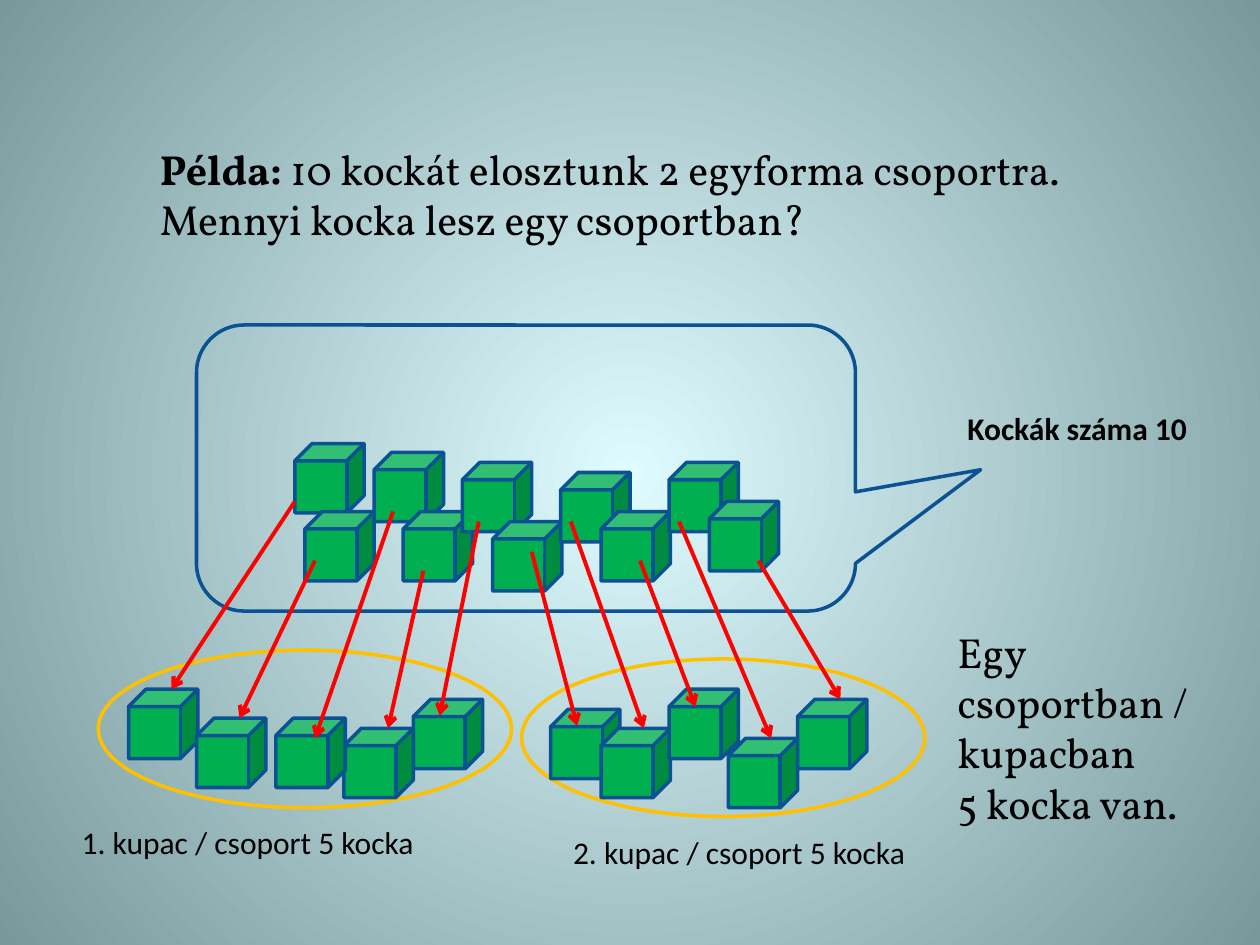
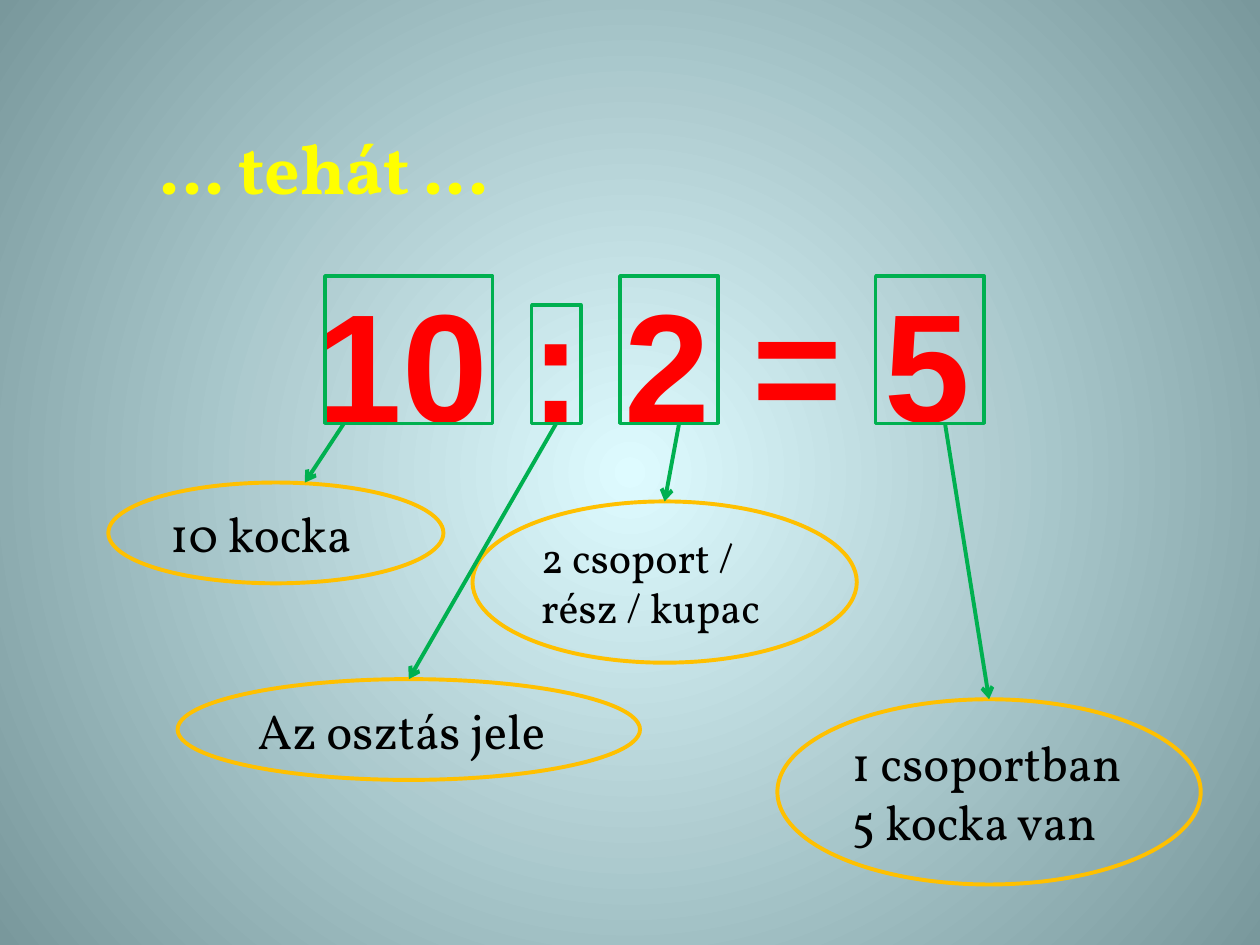
from collections import namedtuple
from dataclasses import dataclass

from lxml.etree import SubElement
from pptx import Presentation
from pptx.dml.color import RGBColor
from pptx.enum.shapes import MSO_CONNECTOR as Connector, MSO_SHAPE as Shape
from pptx.enum.text import MSO_ANCHOR as Anchor, PP_ALIGN as Align
from pptx.oxml.ns import qn
from pptx.util import Inches, Pt

Style = namedtuple("Style", "font size colour bold")


@dataclass(frozen=True)
class Theme:
    glow: str = "DEFBFF"
    edge: str = "79989C"
    green: str = "00B050"
    blue: str = "0B5292"
    gold: str = "FFC000"
    red: str = "FF0000"
    thin: float = 2
    thick: float = 2.25
    body: Style = Style("Vollkorn", 24, "000000", False)
    lead: Style = Style("Vollkorn", 24, "000000", True)
    note: Style = Style("Vollkorn", 28, "000000", False)
    label: Style = Style("Calibri", 18, "000000", False)
    count: Style = Style("Calibri", 18, "000000", True)
    heading: Style = Style("Vollkorn", 40, "FFFF00", True)
    equation: Style = Style("Arial", 88, "FF0000", True)


theme = Theme()


def write(frame, paragraphs, align=Align.LEFT):
    frame.word_wrap = True
    frame.vertical_anchor = Anchor.TOP
    for index, spans in enumerate(paragraphs):
        para = frame.add_paragraph() if index else frame.paragraphs[0]
        para.alignment = align
        for text, style in spans:
            span = para.add_run()
            span.text = text
            span.font.name = style.font
            span.font.size = Pt(style.size)
            span.font.bold = style.bold
            span.font.color.rgb = RGBColor.from_string(style.colour)


def draw(page, kind, bounds, line, width, fill=None):
    shape = page.shapes.add_shape(kind, *map(Inches, bounds))
    shape.shadow.inherit = False
    shape.line.color.rgb = RGBColor.from_string(line)
    shape.line.width = Pt(width)
    if fill:
        shape.fill.solid()
        shape.fill.fore_color.rgb = RGBColor.from_string(fill)
    else:
        shape.fill.background()
    return shape


deck = Presentation()
deck.slide_width, deck.slide_height = Inches(10), Inches(7.5)
sharing, result = [deck.slides.add_slide(deck.slide_layouts[6]) for _ in range(2)]

for page in (sharing, result):
    fill = page.background.fill
    fill.gradient()
    for stop, colour in zip(fill.gradient_stops, (theme.glow, theme.edge)):
        stop.color.rgb = RGBColor.from_string(colour)
    fill.gradient_stops[0].position, fill.gradient_stops[1].position = 0, 1
    gradient = page.element.find(".//" + qn("a:gradFill"))
    gradient.remove(gradient.find(qn("a:lin")))
    radial = SubElement(gradient, qn("a:path"), {"path": "circle"})
    SubElement(radial, qn("a:fillToRect"), dict.fromkeys("ltrb", "50000"))

cube_size = 0.55
pile = [
    (2.97, 3.59), (3.2, 4.06), (3.67, 3.67), (3.91, 4.14), (4.45, 3.75),
    (4.77, 4.06), (5.31, 3.67), (5.63, 3.98), (2.34, 3.52), (2.42, 4.06),
]
groups = [
    (1.02, 5.47), (3.28, 5.55), (2.73, 5.78), (2.19, 5.7), (1.56, 5.7),
    (4.37, 5.63), (4.77, 5.78), (5.31, 5.47), (5.78, 5.86), (6.33, 5.55),
]
for left, top in pile:
    draw(sharing, Shape.CUBE, (left, top, cube_size, cube_size), theme.blue, theme.thin, theme.green)
callout = draw(sharing, Shape.ROUNDED_RECTANGULAR_CALLOUT, (1.56, 2.58, 5.23, 2.27), theme.blue, theme.thin)
for index, value in enumerate((0.69, 0.006, 0.167)):
    callout.adjustments[index] = value
for bounds in ((0.78, 5.16, 3.28, 1.25), (4.14, 5.23, 3.2, 1.25)):
    draw(sharing, Shape.OVAL, bounds, theme.gold, theme.thin)
for left, top in groups:
    draw(sharing, Shape.CUBE, (left, top, cube_size, cube_size), theme.blue, theme.thin, theme.green)

texts = [
    (sharing, (1.17, 1.09, 8.13, 4.38), [[
        ("Példa: ", theme.lead),
        ("10 kockát elosztunk 2 egyforma csoportra. Mennyi kocka lesz egy csoportban?", theme.body),
    ]]),
    (sharing, (7.58, 3.2, 2, 0.4), [[("Kockák száma 10", theme.count)]]),
    (sharing, (4.45, 6.56, 3.13, 0.4), [[("2. kupac / csoport 5 kocka", theme.label)]]),
    (sharing, (0.55, 6.48, 3.36, 0.4), [[("1. kupac / csoport 5 kocka", theme.label)]]),
    (sharing, (7.5, 4.92, 2.19, 1.72), [
        [("Egy csoportban / kupacban", theme.body)],
        [("5 kocka van.", theme.body)],
    ]),
    (result, (1.17, 0.94, 7.19, 0.77), [[("... tehát ...", theme.heading)]]),
]
for page, bounds, paragraphs in texts:
    write(page.shapes.add_textbox(*map(Inches, bounds)).text_frame, paragraphs)

equation = result.shapes.add_textbox(*map(Inches, (0.86, 1.95, 8.5, 2.32))).text_frame
equation.margin_top = Inches(0.18)
write(equation, [[("10 : 2 = 5", theme.equation)]], Align.CENTER)

meanings = []
for bounds, text, style in (
    ((0.86, 3.83, 2.66, 0.8), "10 kocka", theme.note),
    ((1.41, 5.39, 3.67, 0.8), "Az osztás jele", theme.note),
    ((3.75, 3.98, 3.05, 1.28), "2 csoport / rész / kupac", theme.body),
    ((6.17, 5.55, 3.36, 1.47), "1 csoportban 5 kocka van", theme.note),
):
    oval = draw(result, Shape.OVAL, bounds, theme.gold, theme.thick)
    write(oval.text_frame, [[(text, style)]])
    meanings.append(oval)

frame_bottom = 3.36
frames = [
    draw(result, Shape.RECTANGLE, (left, top, width, frame_bottom - top), theme.green, theme.thin)
    for left, top, width in ((2.58, 2.19, 1.33), (4.22, 2.42, 0.39), (4.92, 2.19, 0.78), (6.95, 2.19, 0.86))
]

moves = [
    (6.02, 4.45, 6.67, 5.55), (3.36, 4.53, 3.08, 5.78), (3.12, 4.06, 2.5, 5.86),
    (2.34, 3.98, 1.36, 5.47), (2.5, 4.45, 1.9, 5.7), (3.8, 4.14, 3.49, 5.68),
    (4.22, 4.38, 4.58, 5.76), (4.53, 4.14, 5.11, 5.78), (5.08, 4.45, 5.52, 5.61),
    (5.39, 4.14, 6.12, 5.86),
]
arrows = [(sharing, theme.red, ends, None, None) for ends in moves] + [
    (result, theme.green, (2.73, frame_bottom, 2.42, 3.83), None, None),
    (result, theme.green, (4.41, frame_bottom, 3.24, 5.39), frames[1], meanings[1]),
    (result, theme.green, (5.39, frame_bottom, 5.27, 3.98), None, meanings[2]),
    (result, theme.green, (7.5, frame_bottom, 7.85, 5.55), None, meanings[3]),
]
for page, colour, ends, source, target in arrows:
    arrow = page.shapes.add_connector(Connector.STRAIGHT, *map(Inches, ends))
    if source:
        arrow.begin_connect(source, 2)
    if target:
        arrow.end_connect(target, 0)
    arrow.line.color.rgb = RGBColor.from_string(colour)
    arrow.line.width = Pt(theme.thick)
    properties = arrow.element.spPr
    SubElement(properties.find(qn("a:ln")), qn("a:tailEnd"), {"type": "arrow"})
    SubElement(properties, qn("a:effectLst"))

deck.save("out.pptx")
